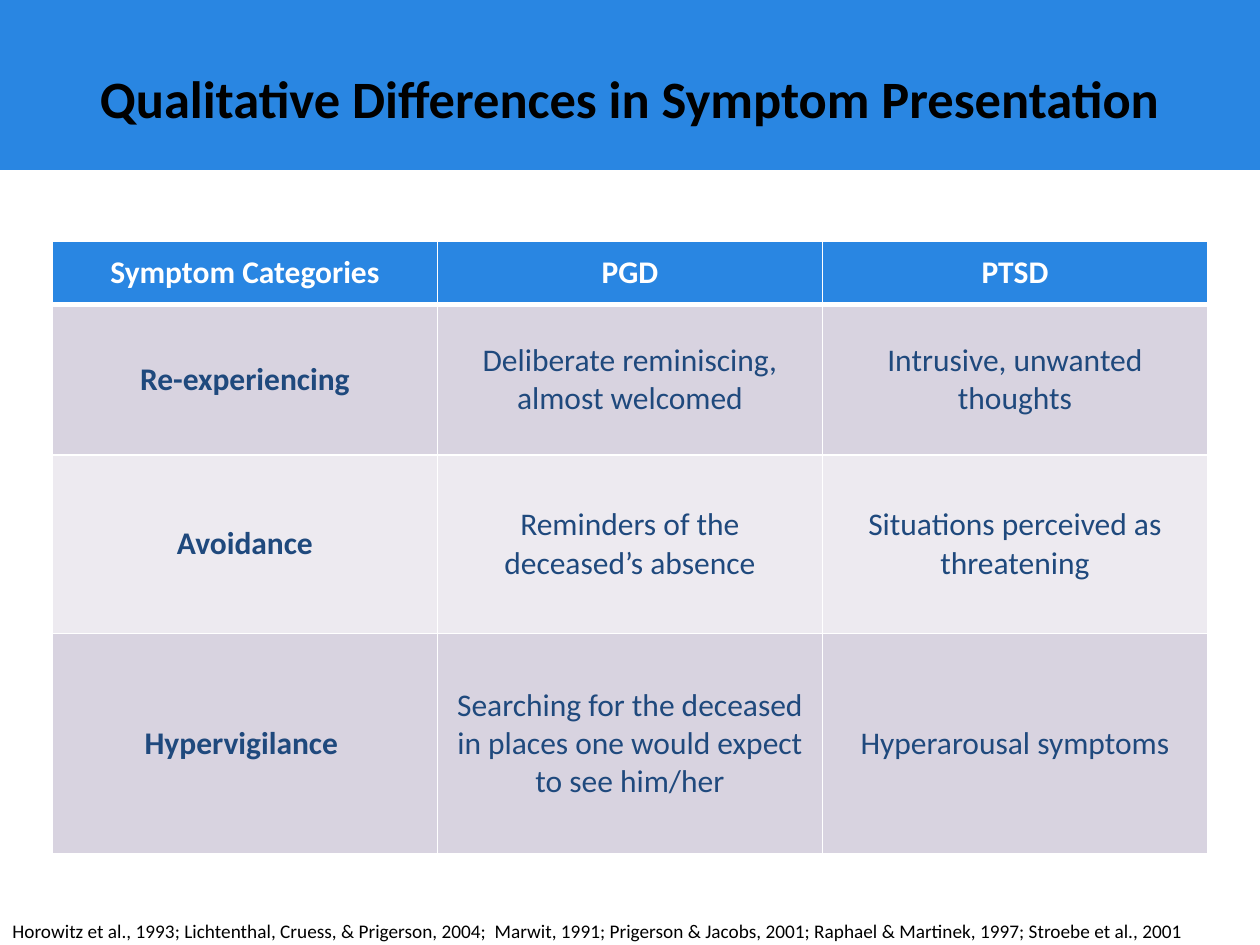
from lxml.etree import SubElement
from pptx import Presentation
from pptx.dml.color import RGBColor
from pptx.enum.shapes import MSO_SHAPE
from pptx.enum.text import MSO_ANCHOR, PP_ALIGN
from pptx.oxml.ns import qn
from pptx.util import Pt

BLUE = RGBColor(0x29, 0x86, 0xE2)
NAVY = RGBColor(0x1F, 0x49, 0x7D)
BLACK = RGBColor(0, 0, 0)
WHITE = RGBColor(0xFF, 0xFF, 0xFF)
DARK_BAND = RGBColor(0xD8, 0xD3, 0xE0)
LIGHT_BAND = RGBColor(0xED, 0xEA, 0xF0)

SLIDE_WIDTH, SLIDE_HEIGHT = 720, 540
COLUMN_WIDTH = 220
ROW_HEIGHTS = [36, 86, 102, 126]

SYMPTOMS = [
    ["Symptom Categories", "PGD", "PTSD"],
    ["Re-experiencing", "Deliberate reminiscing, almost welcomed",
     "Intrusive, unwanted thoughts"],
    ["Avoidance", "Reminders of the deceased’s absence",
     "Situations perceived as threatening"],
    ["Hypervigilance ",
     "Searching for the deceased in places one would expect to see him/her",
     "Hyperarousal symptoms"],
]
CITATIONS = ("Horowitz et al., 1993; Lichtenthal, Cruess, & Prigerson, 2004;  "
             "Marwit, 1991; Prigerson & Jacobs, 2001; Raphael & Martinek, 1997; "
             "Stroebe et al., 2001")


def write(frame, text, size, color, bold=False, align=PP_ALIGN.LEFT):
    paragraph = frame.paragraphs[0]
    paragraph.alignment = align
    run = paragraph.add_run()
    run.text = text
    font = run.font
    font.name, font.size, font.bold = "Calibri", Pt(size), bold
    font.color.rgb = color


def add_title(slide, text):
    # Blue band, placed behind the title
    band = slide.shapes.add_shape(MSO_SHAPE.RECTANGLE, 0, 0, Pt(SLIDE_WIDTH), Pt(96))
    band.shadow.inherit = False
    band.fill.solid()
    band.fill.fore_color.rgb = BLUE
    band.line.color.rgb = BLUE
    band.line.width = Pt(2)

    title = slide.shapes.title
    band._element.addnext(title._element)
    title.left, title.top = Pt(0), Pt(21.6)
    title.width, title.height = Pt(SLIDE_WIDTH), Pt(68.4)
    title.text_frame.vertical_anchor = MSO_ANCHOR.MIDDLE
    write(title.text_frame, text, 30, BLACK, True, PP_ALIGN.CENTER)


def set_borders(cell, top, bottom):
    properties = cell._tc.get_or_add_tcPr()
    for side, width in (("L", 1), ("R", 1), ("T", top), ("B", bottom)):
        line = SubElement(properties, qn(f"a:ln{side}"), w=str(Pt(width)))
        fill = SubElement(line, qn("a:solidFill"))
        SubElement(fill, qn("a:srgbClr"), val=str(WHITE))


def add_symptom_table(slide):
    columns = len(SYMPTOMS[0])
    width = COLUMN_WIDTH * columns
    table = slide.shapes.add_table(
        len(SYMPTOMS), columns, Pt((SLIDE_WIDTH - width) / 2), Pt(138),
        Pt(width), Pt(sum(ROW_HEIGHTS))).table
    for column in table.columns:
        column.width = Pt(COLUMN_WIDTH)

    for r, (height, texts) in enumerate(zip(ROW_HEIGHTS, SYMPTOMS)):
        table.rows[r].height = Pt(height)
        is_header = r == 0
        band_color = DARK_BAND if r % 2 else LIGHT_BAND
        for c, text in enumerate(texts):
            cell = table.cell(r, c)
            # A thick rule separates the header from the body
            set_borders(cell, top=3 if r == 1 else 1, bottom=3 if is_header else 1)
            cell.fill.solid()
            cell.fill.fore_color.rgb = BLUE if is_header else band_color
            cell.vertical_anchor = MSO_ANCHOR.MIDDLE
            write(cell.text_frame, text, 18, WHITE if is_header else NAVY,
                  is_header or c == 0, PP_ALIGN.CENTER)


def add_citations(slide):
    citations = slide.shapes.add_textbox(Pt(0), Pt(522), Pt(690), Pt(34))
    citations.text_frame.word_wrap = True
    write(citations.text_frame, CITATIONS, 11, BLACK)


def main():
    deck = Presentation()
    deck.slide_width, deck.slide_height = Pt(SLIDE_WIDTH), Pt(SLIDE_HEIGHT)
    slide = deck.slides.add_slide(deck.slide_layouts[5])
    add_title(slide, "Qualitative Differences in Symptom Presentation")
    add_citations(slide)
    add_symptom_table(slide)
    deck.save("out.pptx")


if __name__ == "__main__":
    main()
